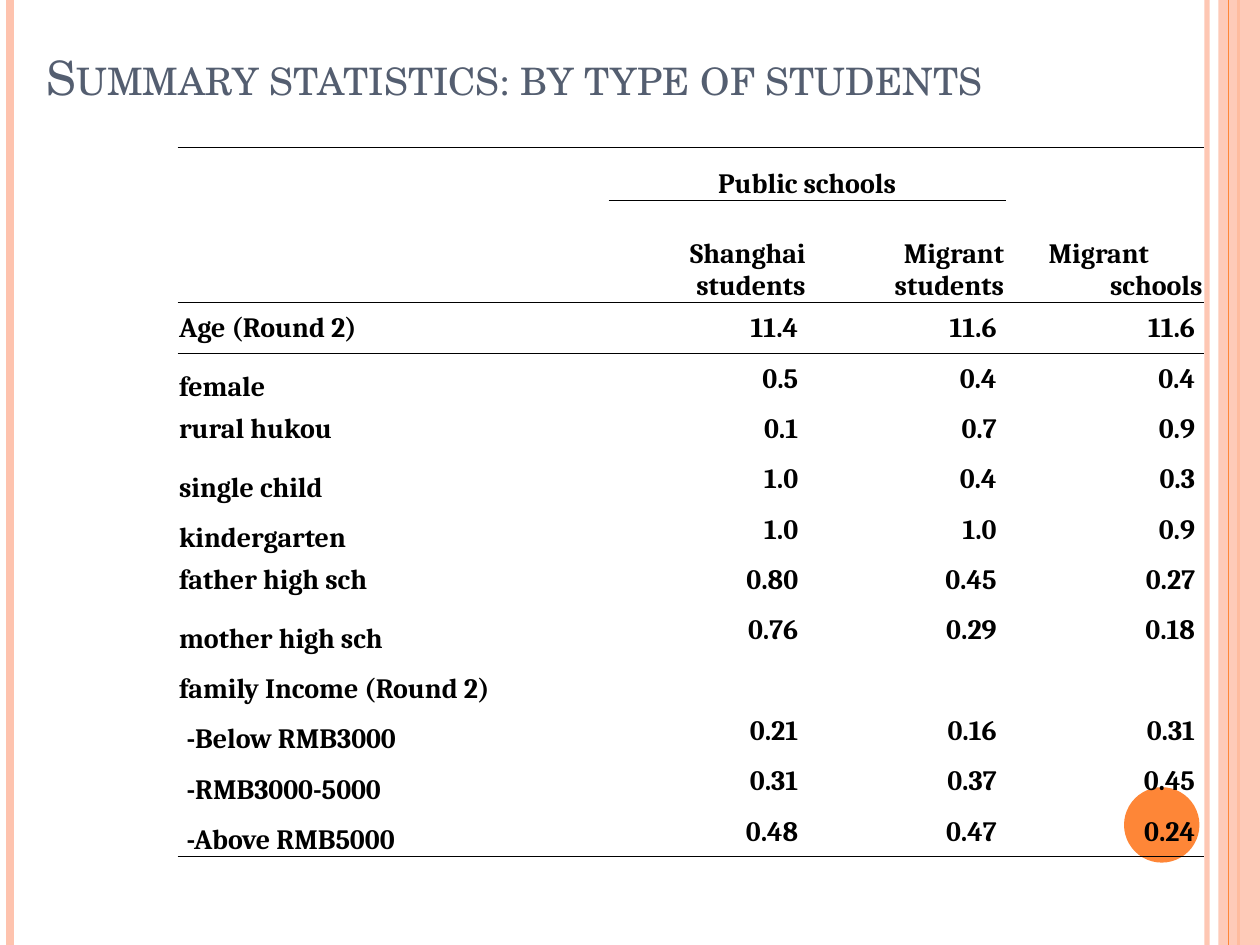
from lxml.etree import SubElement as Sub
from pptx import Presentation
from pptx.dml.color import RGBColor
from pptx.enum.shapes import MSO_CONNECTOR as Link, MSO_SHAPE as Form
from pptx.enum.text import MSO_ANCHOR as Anchor, PP_ALIGN as Align
from pptx.oxml.ns import qn
from pptx.util import Cm, Pt

PEACH, ORANGE, SLATE, BLACK = "FEC3AE", "FE8637", "545E70", "000000"
PLAIN = "{2D5ABB26-0587-4C30-8999-92F81FD0307C}"
MID, LOW = Anchor.MIDDLE, Anchor.BOTTOM
INSET, SPACE = 0.03, 0.15

ROWS = [
    ("Age (Round 2)", MID, 0, ("11.4", "11.6", "11.6")),
    ("female", LOW, 0, ("0.5", "0.4", "0.4")),
    ("rural hukou", MID, 0, ("0.1", "0.7", "0.9")),
    ("single child", LOW, 0, ("1.0", "0.4", "0.3")),
    ("kindergarten", LOW, 0, ("1.0", "1.0", "0.9")),
    ("father high sch", MID, 0, ("0.80", "0.45", "0.27")),
    ("mother high sch", LOW, 0, ("0.76", "0.29", "0.18")),
    ("family Income (Round 2)", LOW, 0, ()),
    ("-Below RMB3000", LOW, SPACE, ("0.21", "0.16", "0.31")),
    ("-RMB3000-5000", LOW, SPACE, ("0.31", "0.37", "0.45")),
    ("-Above RMB5000", LOW, SPACE, ("0.48", "0.47", "0.24")),
]


def paint(fore, tone, alpha=100):
    fore.rgb = RGBColor.from_string(tone)
    if alpha < 100:
        clr = fore._xFill.find(qn("a:srgbClr"))
        Sub(clr, qn("a:alpha")).set("val", str(alpha * 1000))


def add_rule(slide, x, top, high, tone, wide, alpha=100):
    rule = slide.shapes.add_connector(
        Link.STRAIGHT, Cm(x), Cm(top), Cm(x), Cm(top + high))
    rule.line.width = Pt(wide)
    rule.line.fill.solid()
    paint(rule.line.fill.fore_color, tone, alpha)
    Sub(rule._element.spPr, qn("a:effectLst"))


def add_form(slide, kind, x, y, wide, high, tone, alpha=100):
    form = slide.shapes.add_shape(kind, Cm(x), Cm(y), Cm(wide), Cm(high))
    form.shadow.inherit = False
    form.line.fill.background()
    form.fill.solid()
    paint(form.fill.fore_color, tone, alpha)


def add_frame(slide, x, y, wide, high):
    right = x + wide
    add_rule(slide, right - 1.07, y, high, PEACH, 3, 93)
    add_rule(slide, x + 0.2, y, high, PEACH, 4.5)
    add_rule(slide, right - 0.43, y, high, ORANGE, 1.5)
    add_form(slide, Form.RECTANGLE, right - 0.84, y, 0.84, high, PEACH, 87)
    add_rule(slide, right - 0.64, y, high, ORANGE, 0.75)
    add_form(slide, Form.OVAL, right - 2.74, y + high - 3.18, 1.52, 1.52, ORANGE)


def add_title(slide, x, y, wide, high):
    box = slide.shapes.add_textbox(Cm(x), Cm(y), Cm(wide), Cm(high))
    frame = box.text_frame
    frame.word_wrap = True
    frame.vertical_anchor = LOW
    frame.margin_top, frame.margin_bottom = 0, Cm(1.27)
    frame.text = "Summary statistics: by type of students"
    font = frame.paragraphs[0].runs[0].font
    font.name, font.size = "TeX Gyre Schola", Pt(27)
    paint_font(font, SLATE)
    font._element.set("cap", "small")


def paint_font(font, tone):
    font.fill.solid()
    paint(font.fill.fore_color, tone)


def set_cell(cell, text, align, anchor, left=0, right=0):
    cell.margin_left, cell.margin_right = Cm(INSET + left), Cm(INSET + right)
    cell.margin_top, cell.margin_bottom = Cm(INSET), 0
    cell.vertical_anchor = anchor
    cell.text_frame.text = text
    for para in cell.text_frame.paragraphs:
        para.alignment = align
        for run in para.runs:
            font = run.font
            font.name, font.size, font.bold = "Cambria", Pt(16), True
            paint_font(font, BLACK)


def set_edge(cell, side, wide):
    line = Sub(cell._tc.get_or_add_tcPr(), qn("a:ln" + side))
    line.set("w", str(Pt(wide)))
    fill = Sub(line, qn("a:solidFill"))
    Sub(fill, qn("a:srgbClr")).set("val", BLACK)


def add_edges(table):
    last = len(ROWS) + 1
    for col in range(4):
        mid = 1 if col in (1, 2) else 0
        edges = [(0, "T", 0.5), (1, "B", 0.5), (2, "T", 0.5), (last, "B", 0.5)]
        if mid:
            edges += [(0, "B", 1), (1, "T", 1)]
        else:
            edges += [(0, "B", 0.5)]
        for row, side, wide in sorted(edges, key=lambda e: (e[0], e[1] == "B")):
            set_edge(table.cell(row, col), side, wide)


def add_stats(slide, x, y, wide, high):
    heights = [1.07, 2.06] + [(high - 3.13) / len(ROWS)] * len(ROWS)
    widths = [8.69] + [(wide - 8.69) / 3] * 3
    table = slide.shapes.add_table(
        len(heights), 4, Cm(x), Cm(y), Cm(wide), Cm(high)).table
    table.first_row = table.horz_banding = False
    table._tbl.tblPr.find(qn("a:tableStyleId")).text = PLAIN
    for col, size in zip(table.columns, widths):
        col.width = Cm(size)
    for row, size in zip(table.rows, heights):
        row.height = Cm(size)
    add_edges(table)
    for cell in table.iter_cells():
        cell.fill.background()
        set_cell(cell, "", Align.LEFT, MID)
    for col in (0, 3):
        table.cell(0, col).merge(table.cell(1, col))
    table.cell(0, 1).merge(table.cell(0, 2))

    set_cell(table.cell(0, 1), "Public schools", Align.CENTER, LOW)
    set_cell(table.cell(1, 1), "Shanghai students", Align.RIGHT, LOW)
    set_cell(table.cell(1, 2), "Migrant students", Align.RIGHT, LOW)
    head = table.cell(0, 3)
    set_cell(head, "Migrant\nschools", Align.RIGHT, LOW)
    first = head.text_frame.paragraphs[0]
    first.alignment = Align.LEFT
    first._p.get_or_add_pPr().set("marL", str(Cm(0.84)))

    for row, (label, anchor, dent, values) in enumerate(ROWS, 2):
        set_cell(table.cell(row, 0), label, Align.LEFT, anchor, left=dent)
        for col, value in enumerate(values, 1):
            set_cell(table.cell(row, col), value, Align.RIGHT, MID, right=SPACE)


def main():
    deck = Presentation()
    deck.slide_width, deck.slide_height = Cm(25.4), Cm(19.05)
    slide = deck.slides.add_slide(deck.slide_layouts[6])
    add_frame(slide, 0, 0, 25.4, 19.05)
    add_title(slide, 0.69, 1.12, 22.86, 2.21)
    add_stats(slide, 3.58, 2.97, 20.69, 14.3)
    deck.save("out.pptx")


if __name__ == "__main__":
    main()
